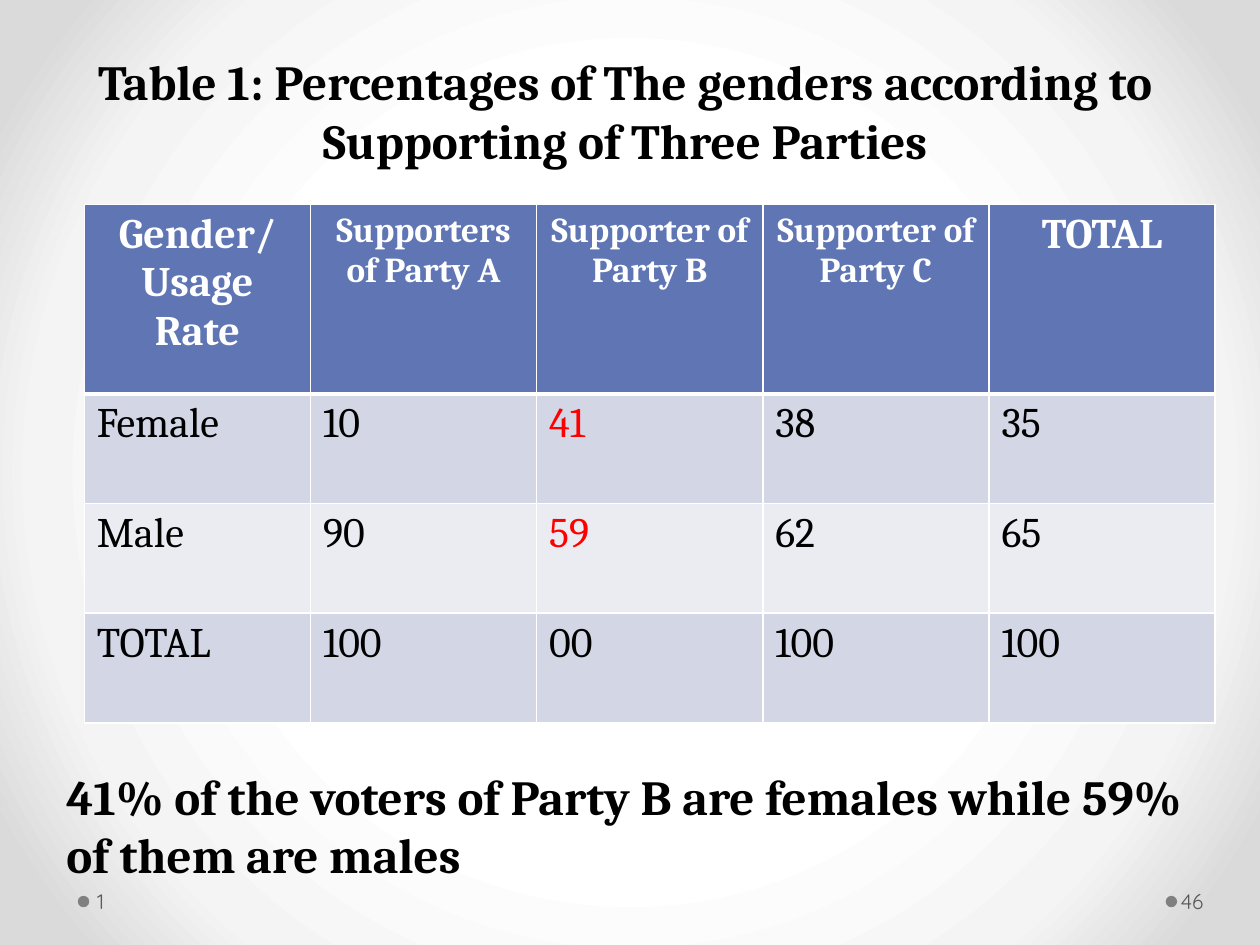
import pptx
import pptx.dml.color
import pptx.enum.shapes
import pptx.enum.text
import pptx.oxml
import pptx.oxml.ns
import pptx.util
from dataclasses import dataclass

Cm = pptx.util.Cm
ALIGN = pptx.enum.text.PP_ALIGN
ANCHOR = pptx.enum.text.MSO_ANCHOR
NAMESPACE = pptx.oxml.ns.nsdecls("a")


@dataclass(frozen=True)
class Theme:
    font: str = "Cambria"
    number_font: str = "Quicksand"
    black: str = "000000"
    white: str = "FFFFFF"
    red: str = "FF0000"
    number: str = "595959"
    dot: str = "808080"
    header: str = "6076B4"
    bands: tuple = ("D2D6E5", "EAECF2")
    background: tuple = ((50, "FFFFFF"), (76, "F4F4F4"), (92, "DADADA"))
    title_size: int = 28
    body_size: int = 24
    party_size: int = 20
    number_size: int = 12


theme = Theme()


def set_text(text_frame, text, size, color, bold=False, align=ALIGN.LEFT, font=theme.font):
    text_frame.text = text
    paragraph = text_frame.paragraphs[0]
    paragraph.alignment = align
    run_font = paragraph.runs[0].font
    run_font.name = font
    run_font.size = pptx.util.Pt(size)
    run_font.bold = bold
    run_font.color.rgb = pptx.dml.color.RGBColor.from_string(color)


def set_borders(cell, widths):
    properties = cell._tc.get_or_add_tcPr()
    for index, (side, width) in enumerate(widths.items()):
        properties.insert(index, pptx.oxml.parse_xml(
            f'<a:ln{side} {NAMESPACE} w="{pptx.util.Pt(width)}"><a:solidFill>'
            f'<a:srgbClr val="{theme.white}"/></a:solidFill></a:ln{side}>'))


presentation = pptx.Presentation()
presentation.slide_width = Cm(25.4)
presentation.slide_height = Cm(19.05)
slide = presentation.slides.add_slide(presentation.slide_layouts[5])

slide.background.fill.gradient()
gradient = slide.element.find(".//" + pptx.oxml.ns.qn("a:gradFill"))
stops = "".join(f'<a:gs pos="{position * 1000}"><a:srgbClr val="{color}"/></a:gs>'
                for position, color in theme.background)
gradient.getparent().replace(gradient, pptx.oxml.parse_xml(
    f'<a:gradFill {NAMESPACE} rotWithShape="1"><a:gsLst>{stops}</a:gsLst><a:path path="circle">'
    '<a:fillToRect l="50000" t="50000" r="50000" b="50000"/></a:path></a:gradFill>'))

for left in (1.57, 23.5):
    dot = slide.shapes.add_shape(
        pptx.enum.shapes.MSO_SHAPE.OVAL, Cm(left), Cm(18.06), Cm(0.23), Cm(0.23))
    dot.shadow.inherit = False
    dot.fill.solid()
    dot.fill.fore_color.rgb = pptx.dml.color.RGBColor.from_string(theme.dot)
    dot.line.fill.background()

title = slide.shapes.title
title.left, title.top, title.width, title.height = Cm(1.3), Cm(0.91), Cm(22.6), Cm(2.65)
title.text_frame.vertical_anchor = ANCHOR.TOP
title.text_frame.auto_size = pptx.enum.text.MSO_AUTO_SIZE.NONE
set_text(title.text_frame, "Table 1: Percentages of The genders according to Supporting of Three Parties",
         theme.title_size, theme.black, True, ALIGN.CENTER)

rows = [
    ["Gender/ Usage Rate", "Supporters of Party A", "Supporter of Party B", "Supporter of Party C", "TOTAL"],
    ["Female", "10", "41", "38", "35"],
    ["Male", "90", "59", "62", "65"],
    ["TOTAL", "100", "00", "100", "100"],
]
row_heights = [3.82, 2.21, 2.21, 2.21]
table = slide.shapes.add_table(
    len(rows), len(rows[0]), Cm(1.7), Cm(4.12), Cm(22.8), Cm(sum(row_heights))).table
for column in table.columns:
    column.width = Cm(4.56)
for row_index, values in enumerate(rows):
    table.rows[row_index].height = Cm(row_heights[row_index])
    is_header = row_index == 0
    fill = theme.header if is_header else theme.bands[(row_index - 1) % 2]
    for column_index, value in enumerate(values):
        cell = table.cell(row_index, column_index)
        cell.fill.solid()
        cell.fill.fore_color.rgb = pptx.dml.color.RGBColor.from_string(fill)
        set_borders(cell, {"L": 1, "R": 1, "T": 3 if row_index == 1 else 1, "B": 3 if is_header else 1})
        if is_header:
            size = theme.party_size if "Party" in value else theme.body_size
            set_text(cell.text_frame, value, size, theme.white, True, ALIGN.CENTER)
        else:
            color = theme.red if value in ("41", "59") else theme.black
            set_text(cell.text_frame, value, theme.body_size, color)

for text, left, width, margin_left, margin_right in (
        ("46", 23.72, 1.55, 0.08, 0.13), ("1", 1.83, 7.9, 0.13, 0.25)):
    number_box = slide.shapes.add_textbox(Cm(left), Cm(17.65), Cm(width), Cm(1.02))
    frame = number_box.text_frame
    frame.word_wrap = True
    frame.vertical_anchor = ANCHOR.MIDDLE
    frame.margin_left, frame.margin_right = Cm(margin_left), Cm(margin_right)
    set_text(frame, text, theme.number_size, theme.number, font=theme.number_font)

conclusion = slide.shapes.add_textbox(Cm(1.09), Cm(15.32), Cm(23.6), Cm(2.65))
conclusion.text_frame.word_wrap = True
set_text(conclusion.text_frame, "41% of the voters of Party B are females while 59% of them are males",
         theme.title_size, theme.black, True)

presentation.save("out.pptx")
